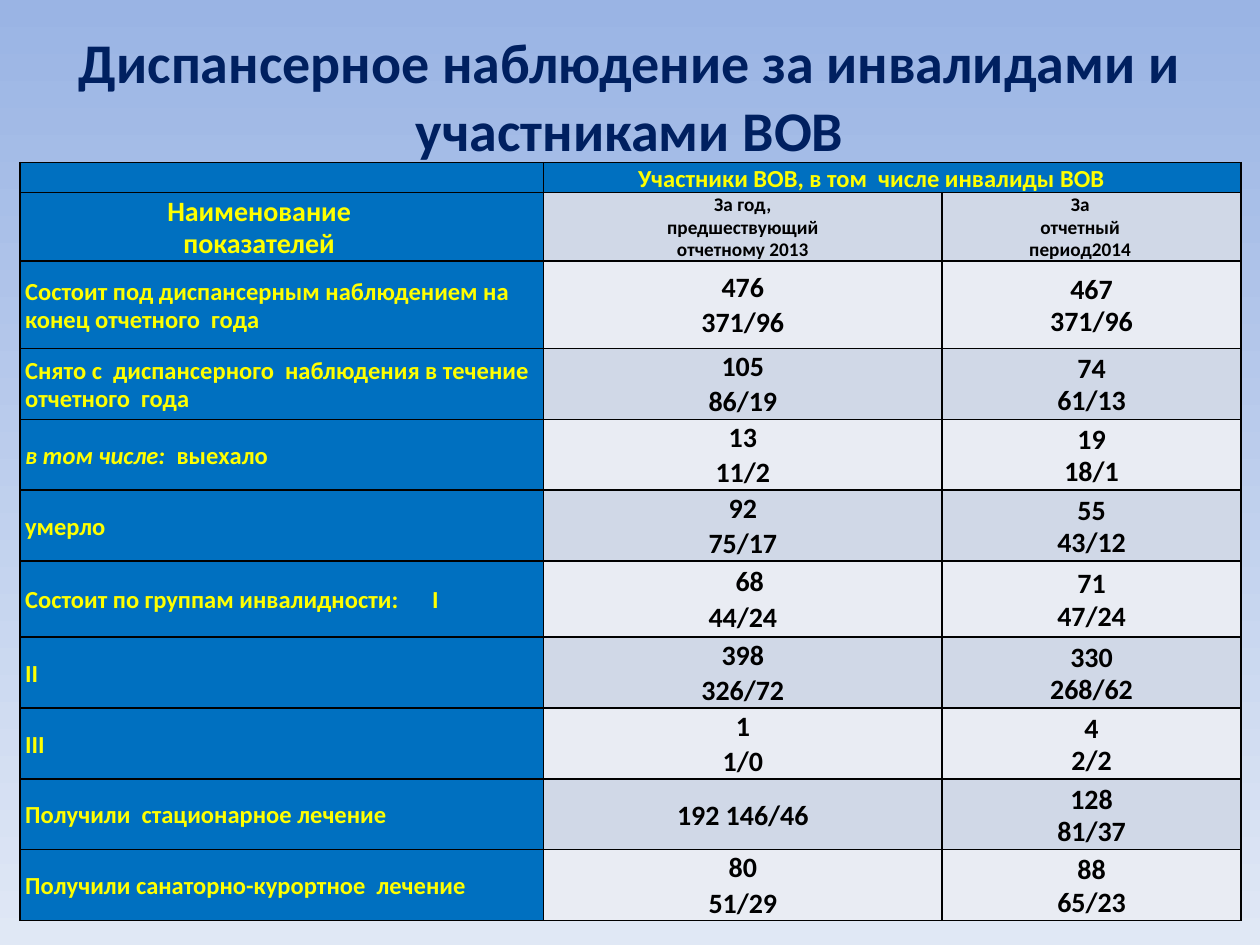
from lxml.etree import SubElement
from pptx import Presentation
from pptx.dml.color import RGBColor
from pptx.enum.text import MSO_ANCHOR, PP_ALIGN
from pptx.oxml import parse_xml
from pptx.oxml.ns import nsdecls, qn
from pptx.util import Emu, Inches, Pt

COLORS = {
    "sky": "9AB4E4", "mist": "E0E8F5", "navy": "002060", "blue": "0070C0",
    "yellow": "FFFF00", "black": "000000", "dark_band": "D0D8E7", "light_band": "E9ECF3",
}
STYLES = {
    "title": {"size": Pt(32), "color": "navy"},
    "group": {"size": Pt(14), "color": "yellow"},
    "name": {"size": Pt(16), "color": "yellow"},
    "year": {"size": Pt(11), "color": "black"},
    "value": {"size": Pt(16), "color": "black"},
}
COLUMNS = [4.15, 3.16, 2.37]
ROWS = [0.23, 0.54, 0.69, 0.56, 0.56, 0.56, 0.6, 0.56, 0.56, 0.56, 0.56]
GROUP_TAB = 3.23
HEADERS = [
    (0, 1, "Участники ВОВ, в том  числе инвалиды ВОВ", "group", "blue", 0.37),
    (1, 0, "Наименование\vпоказателей", "name", "blue", 0.4),
    (1, 1, "За год,\vпредшествующий\vотчетному 2013", "year", "dark_band", 0.04),
    (1, 2, "За\vотчетный\vпериод2014", "year", "dark_band", 0.22),
]
INDICATORS = [
    ("Состоит под диспансерным наблюдением на конец отчетного  года",
     ["476", "371/96"], ["467", "371/96"]),
    ("Снято с  диспансерного  наблюдения в течение отчетного  года",
     ["105", "86/19"], ["74", "61/13"]),
    ("в том числе:  |выехало", ["13", "11/2"], ["19", "18/1"]),
    ("умерло", ["92", "75/17"], ["55", "43/12"]),
    ("Состоит по группам инвалидности:\tI", ["68", "44/24"], ["71", "47/24"]),
    ("II", ["398", "326/72"], ["330", "268/62"]),
    ("III", ["1", "1/0"], ["4", "2/2"]),
    ("Получили  стационарное лечение", ["192 146/46"], ["128", "81/37"]),
    ("Получили санаторно-курортное  лечение", ["80", "51/29"], ["88", "65/23"]),
]


def rgb(name):
    return RGBColor.from_string(COLORS[name])


def write(p, text, style, align=PP_ALIGN.CENTER, spacing=0.94):
    p.alignment = align
    p.line_spacing = spacing
    if "\t" in text:
        tabs = SubElement(p._p.get_or_add_pPr(), qn("a:tabLst"))
        SubElement(tabs, qn("a:tab"), pos=str(Inches(GROUP_TAB)), algn="l")
    lead, bar, rest = text.partition("|")
    for part, italic in ((lead, bool(bar)), (rest, False)):
        if not part:
            continue
        for i, line in enumerate(part.split("\v")):
            if i:
                p.add_line_break()
            r = p.add_run()
            r.text = line
            font = {"name": "Calibri", "size": STYLES[style]["size"], "bold": True, "italic": italic}
            for key, value in font.items():
                setattr(r.font, key, value)
            r.font.color.rgb = rgb(STYLES[style]["color"])


def format_cell(cell, fill, right=0.04, top=0.02):
    layout = {
        "margin_left": Inches(0.04), "margin_right": Inches(right),
        "margin_top": Inches(top), "margin_bottom": 0,
        "vertical_anchor": MSO_ANCHOR.MIDDLE,
    }
    for key, value in layout.items():
        setattr(cell, key, value)
    tc_pr = cell._tc.get_or_add_tcPr()
    for i, side in enumerate("LRTB"):
        tc_pr.insert(i, parse_xml(
            f'<a:ln{side} {nsdecls("a")} w="{Pt(1)}"><a:solidFill>'
            f'<a:srgbClr val="{COLORS["black"]}"/></a:solidFill></a:ln{side}>'))
    cell.fill.solid()
    cell.fill.fore_color.rgb = rgb(fill)


def add_title(slide, box):
    tf = slide.shapes.add_textbox(*box).text_frame
    tf.word_wrap = True
    tf.vertical_anchor = MSO_ANCHOR.MIDDLE
    write(tf.paragraphs[0], "Диспансерное наблюдение за инвалидами и участниками ВОВ",
          "title", spacing=1.0)


def add_indicator_table(slide, box):
    left, top, width, height = box
    table = slide.shapes.add_table(len(ROWS), len(COLUMNS), *box).table
    for column, share in zip(table.columns, COLUMNS):
        column.width = Emu(int(width * share / sum(COLUMNS)))
    for row, share in zip(table.rows, ROWS):
        row.height = Emu(int(height * share / sum(ROWS)))

    corner = table.cell(0, 0)
    format_cell(corner, "blue")
    SubElement(corner.text_frame.paragraphs[0]._p, qn("a:endParaRPr"), sz="1000")
    format_cell(table.cell(0, 2), "blue")
    table.cell(0, 1).merge(table.cell(0, 2))
    for row, col, text, style, fill, right in HEADERS:
        cell = table.cell(row, col)
        format_cell(cell, fill, right, 0.01 if style == "year" else 0.02)
        write(cell.text_frame.paragraphs[0], text, style)

    for row, (name, *years) in enumerate(INDICATORS, 2):
        cell = table.cell(row, 0)
        format_cell(cell, "blue")
        write(cell.text_frame.paragraphs[0], name, "group", PP_ALIGN.LEFT)
        for col, values in enumerate(years, 1):
            cell = table.cell(row, col)
            format_cell(cell, "dark_band" if row % 2 else "light_band")
            tf = cell.text_frame
            for i, value in enumerate(values):
                p = tf.add_paragraph() if i else tf.paragraphs[0]
                write(p, value, "value", spacing=1.06 if i and col == 1 else 0.94)
                if value == "68":
                    p._p.get_or_add_pPr().set("marL", str(Inches(0.11)))


def paint_background(slide):
    fill = slide.background.fill
    fill.gradient()
    fill.gradient_angle = 270
    for stop, name in zip(fill.gradient_stops, ("sky", "mist")):
        stop.color.rgb = rgb(name)


def main():
    prs = Presentation()
    prs.slide_width, prs.slide_height = Inches(10), Inches(7.5)
    slide = prs.slides.add_slide(prs.slide_layouts[6])
    paint_background(slide)
    add_title(slide, (Inches(0.5), Inches(0.13), Inches(9), Inches(1.25)))
    add_indicator_table(slide, (Inches(0.16), Inches(1.29), Inches(9.69), Inches(6.01)))
    prs.save("out.pptx")


if __name__ == "__main__":
    main()
